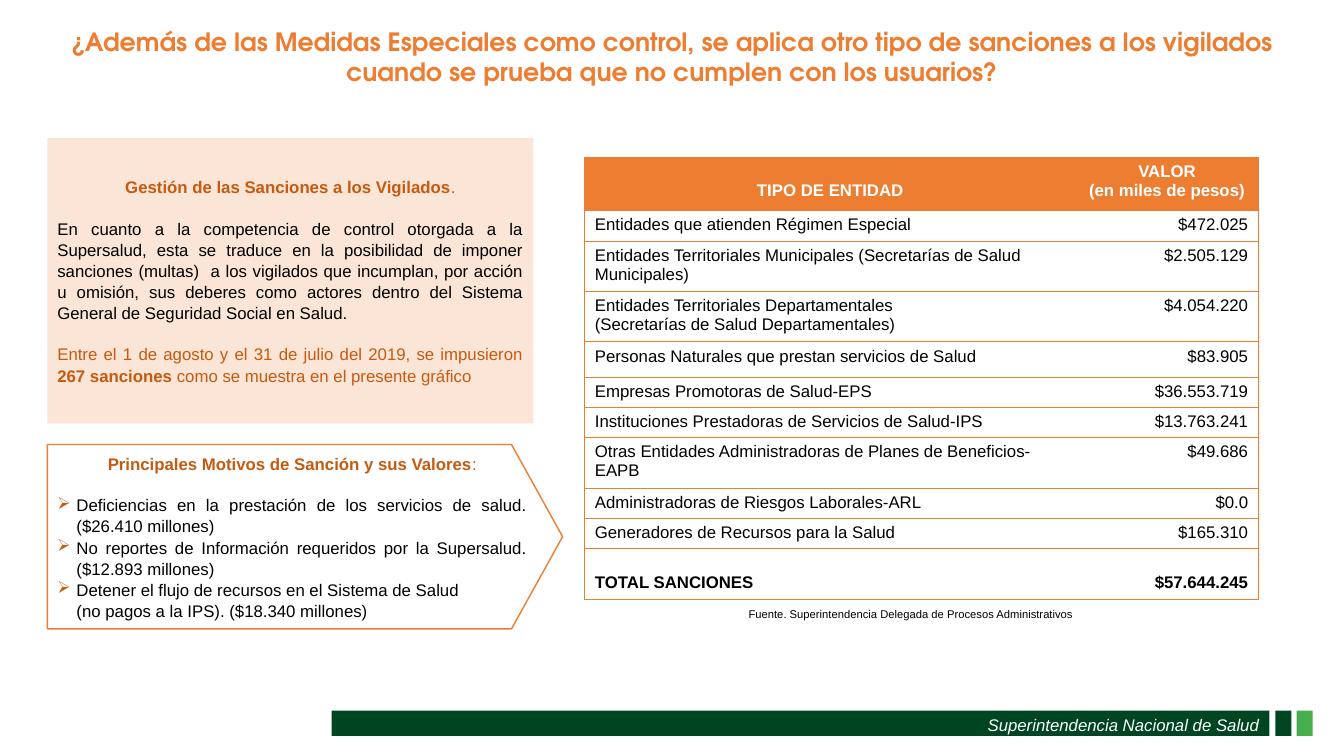
import pptx
import pptx.dml.color
import pptx.enum.shapes
import pptx.enum.text
import pptx.oxml
import pptx.oxml.ns
import pptx.util
from lxml import etree

ORANGE = "ED7D31"
RUST = "C55A11"
PEACH = "FBE5D6"
DARK_GREEN = "004521"
LIGHT_GREEN = "46AE4C"
BLACK = "000000"
WHITE = "FFFFFF"

Inches = pptx.util.Inches
ALIGN = pptx.enum.text.PP_ALIGN
ANCHOR = pptx.enum.text.MSO_ANCHOR
SHAPE = pptx.enum.shapes.MSO_SHAPE

ENTITIES = [
    (["Entidades que atienden Régimen Especial"], "$472.025", 0.3),
    (["Entidades Territoriales Municipales (Secretarías de Salud Municipales)"], "$2.505.129", 0.5),
    (["Entidades Territoriales Departamentales", "(Secretarías de Salud Departamentales)"],
     "$4.054.220", 0.5),
    (["Personas Naturales que prestan servicios de Salud"], "$83.905", 0.35),
    (["Empresas Promotoras de Salud-EPS"], "$36.553.719", 0.3),
    (["Instituciones Prestadoras de Servicios de Salud-IPS"], "$13.763.241", 0.3),
    (["Otras Entidades Administradoras de Planes de Beneficios-EAPB"], "$49.686", 0.5),
    (["Administradoras de Riesgos Laborales-ARL"], "$0.0", 0.3),
    (["Generadores de Recursos para la Salud"], "$165.310", 0.3),
]


def color(value):
    return pptx.dml.color.RGBColor.from_string(value)


def add_span(para, text, tint=BLACK, bold=False, size=12, italic=False, font="Arial"):
    span = para.add_run()
    span.text = text
    span.font.name = font
    span.font.size = pptx.util.Pt(size)
    span.font.bold = bold
    span.font.italic = italic
    span.font.color.rgb = color(tint)


def add_para(frame, align, first=False):
    para = frame.paragraphs[0] if first else frame.add_paragraph()
    para.alignment = align
    return para


def add_block(page, kind, box, fill=None, line=None):
    block = page.shapes.add_shape(kind, *map(Inches, box))
    block.shadow.inherit = False
    if fill:
        block.fill.solid()
        block.fill.fore_color.rgb = color(fill)
    else:
        block.fill.background()
    if line:
        block.line.color.rgb = color(line)
        block.line.width = pptx.util.Pt(1)
    else:
        block.line.fill.background()
    block.text_frame.word_wrap = True
    block.text_frame.vertical_anchor = ANCHOR.MIDDLE
    return block


def add_label(page, box, text, align, **style):
    label = page.shapes.add_textbox(*map(Inches, box))
    label.text_frame.word_wrap = False
    add_span(add_para(label.text_frame, align, True), text, **style)


def add_heading(frame, text, mark):
    para = add_para(frame, ALIGN.CENTER, True)
    para.line_spacing = 1.05
    para.space_after = pptx.util.Pt(14.4)
    add_span(para, text, RUST, True)
    add_span(para, mark, RUST)


def add_title(page, box):
    title = page.shapes.title
    title.left, title.top, title.width, title.height = map(Inches, box)
    frame = title.text_frame
    frame.word_wrap = True
    frame.auto_size = pptx.enum.text.MSO_AUTO_SIZE.NONE
    frame.vertical_anchor = ANCHOR.TOP
    add_span(add_para(frame, ALIGN.CENTER, True),
             "¿Además de las Medidas Especiales como control, se aplica otro tipo de sanciones "
             "a los vigilados cuando se prueba que no cumplen con los usuarios?",
             ORANGE, True, 18, font="TeX Gyre Adventor")


def add_sanctions_panel(page, box):
    frame = add_block(page, SHAPE.RECTANGLE, box, PEACH).text_frame
    add_heading(frame, "Gestión de las Sanciones a los Vigilados", ".")
    scope = add_para(frame, ALIGN.JUSTIFY)
    scope.line_spacing = 1.05
    scope.space_after = pptx.util.Pt(14.4)
    add_span(scope, "En cuanto a la competencia de control otorgada a la Supersalud, esta se "
                    "traduce en la posibilidad de imponer sanciones (multas)  a los vigilados que "
                    "incumplan, por acción u omisión, sus deberes como actores dentro del Sistema "
                    "General de Seguridad Social en Salud.")
    result = add_para(frame, ALIGN.JUSTIFY)
    result.line_spacing = 1.05
    add_span(result, "Entre el 1 de agosto y el 31 de julio del 2019, se impusieron ", RUST)
    add_span(result, "267 sanciones ", RUST, True)
    add_span(result, "como se muestra en el presente gráfico", RUST)


def add_bullet(para):
    props = para._p.get_or_add_pPr()
    props.set("marL", str(Inches(0.19)))
    props.set("indent", str(-Inches(0.19)))
    tint = etree.SubElement(props, pptx.oxml.ns.qn("a:buClr"))
    etree.SubElement(tint, pptx.oxml.ns.qn("a:srgbClr"), val=RUST)
    etree.SubElement(props, pptx.oxml.ns.qn("a:buChar"), char="➢")


def add_reasons_arrow(page, box):
    arrow = add_block(page, SHAPE.PENTAGON, box, line=ORANGE)
    arrow.adjustments[0] = 0.277
    frame = arrow.text_frame
    add_heading(frame, "Principales Motivos de Sanción y sus Valores", ":")
    reasons = [
        (ALIGN.JUSTIFY, ["Deficiencias en la prestación de los servicios de salud. ($26.410 millones)"]),
        (ALIGN.JUSTIFY, ["No reportes de Información requeridos por la Supersalud. ($12.893 millones)"]),
        (ALIGN.LEFT, ["Detener el flujo de recursos en el Sistema de Salud",
                      "(no pagos a la IPS). ($18.340 millones)"]),
    ]
    for align, lines in reasons:
        para = add_para(frame, align)
        para.line_spacing = 1.05
        add_bullet(para)
        for index, line in enumerate(lines):
            if index:
                para.add_line_break()
            add_span(para, line)


def set_borders(cell, sides):
    props = cell._tc.get_or_add_tcPr()
    for side in "LRTB":
        edge = etree.SubElement(props, pptx.oxml.ns.qn("a:ln" + side), w=str(pptx.util.Pt(0.5)))
        if side in sides:
            fill = etree.SubElement(edge, pptx.oxml.ns.qn("a:solidFill"))
            etree.SubElement(fill, pptx.oxml.ns.qn("a:srgbClr"), val=ORANGE)
        else:
            etree.SubElement(edge, pptx.oxml.ns.qn("a:noFill"))


def add_values_table(page, box):
    header = (["TIPO DE ENTIDAD"], ["VALOR", "(en miles de pesos)"], 0.53)
    body = [(names, [value], height) for names, value, height in ENTITIES]
    total = (["TOTAL SANCIONES"], ["$57.644.245"], 0.5)
    rows = [header, *body, total]
    table = page.shapes.add_table(len(rows), 2, *map(Inches, box)).table
    table.horz_banding = False
    table.columns[0].width = Inches(4.87)
    table.columns[1].width = Inches(box[2] - 4.87)
    for row, (names, values, height) in enumerate(rows):
        table.rows[row].height = Inches(height)
        is_header = row == 0
        is_total = row == len(rows) - 1
        for column, lines in enumerate((names, values)):
            cell = table.cell(row, column)
            set_borders(cell, "TB" + "LR"[column])
            if is_header:
                cell.fill.solid()
                cell.fill.fore_color.rgb = color(ORANGE)
            else:
                cell.fill.background()
            lowered = (is_header or is_total) and len(lines) == 1
            cell.margin_top = Inches(0.24 if lowered else 0.05)
            align = ALIGN.CENTER if is_header else (ALIGN.LEFT, ALIGN.RIGHT)[column]
            for index, line in enumerate(lines):
                add_span(add_para(cell.text_frame, align, index == 0), line,
                         WHITE if is_header else BLACK, is_header or is_total)


def add_footer(page, box):
    left, top, width, height = box
    add_block(page, SHAPE.RECTANGLE, box, DARK_GREEN)
    for offset, tint in ((0.06, DARK_GREEN), (0.27, LIGHT_GREEN)):
        add_block(page, SHAPE.RECTANGLE, (left + width + offset, top, 0.16, height), tint)
    add_label(page, (left + width - 2.91, top - 0.01, 2.91, 0.3),
              "Superintendencia Nacional de Salud", ALIGN.RIGHT, tint=WHITE, italic=True)


def main():
    deck = pptx.Presentation()
    deck.slide_width = Inches(13.33)
    deck.slide_height = Inches(7.5)
    page = deck.slides.add_slide(deck.slide_layouts[5])
    add_footer(page, (3.29, 7.05, 9.3, 0.25))
    add_title(page, (0.15, 0.21, 13.03, 0.71))
    add_sanctions_panel(page, (0.47, 1.37, 4.82, 2.83))
    add_label(page, (7.3, 5.98, 3.47, 0.24),
              "Fuente. Superintendencia Delegada de Procesos Administrativos", ALIGN.CENTER, size=8)
    add_values_table(page, (5.8, 1.56, 6.68, 4.38))
    add_reasons_arrow(page, (0.47, 4.41, 5.11, 1.83))
    deck.save("out.pptx")


if __name__ == "__main__":
    main()
